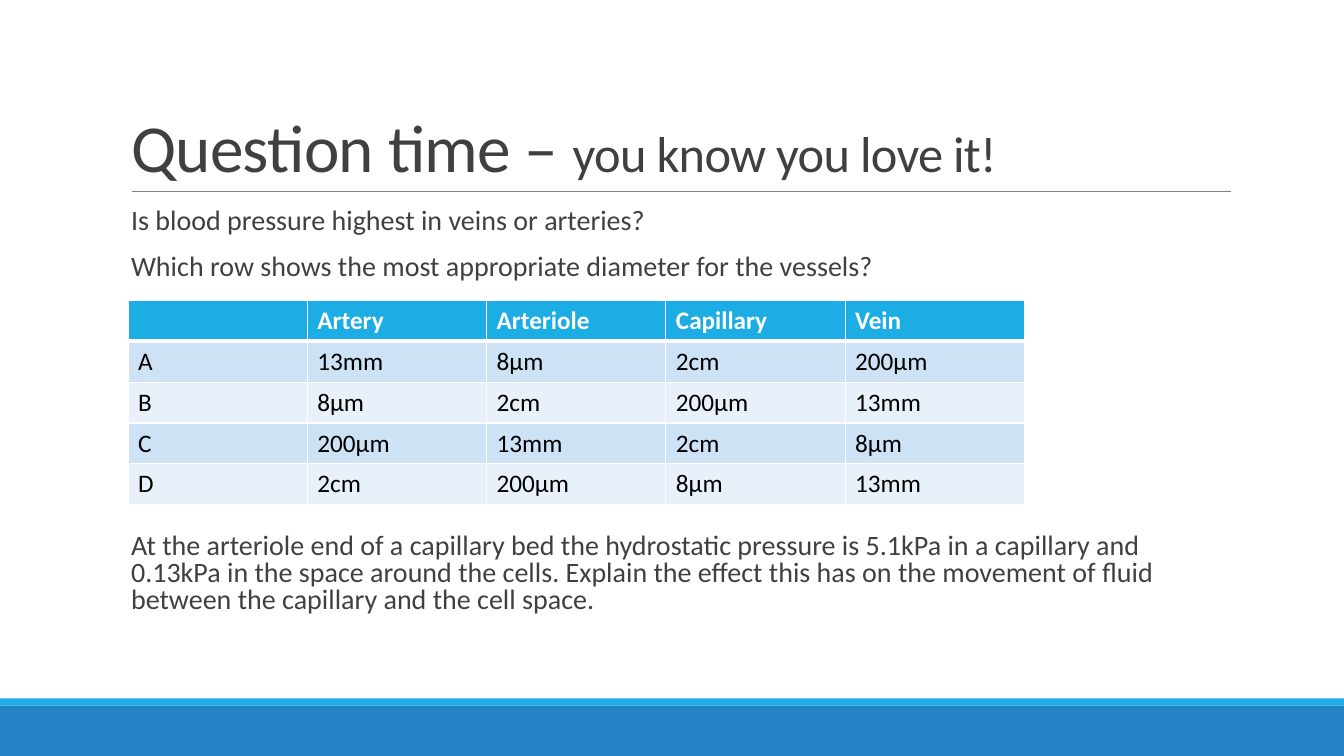
from lxml.etree import SubElement
from pptx import Presentation
from pptx.dml.color import RGBColor
from pptx.enum.shapes import MSO_CONNECTOR, MSO_SHAPE
from pptx.enum.text import MSO_ANCHOR, MSO_AUTO_SIZE, PP_ALIGN
from pptx.oxml.ns import qn
from pptx.util import Inches, Pt

FONT = "Calibri"
DARK, WHITE, CYAN = "404040", "FFFFFF", "1CADE4"
BANDS = ["CDE3F5", "E8F1FA"]
ROWS = [
    ["", "Artery", "Arteriole", "Capillary", "Vein"],
    ["A", "13mm", "8µm", "2cm", "200µm"],
    ["B", "8µm", "2cm", "200µm", "13mm"],
    ["C", "200µm", "13mm", "2cm", "8µm"],
    ["D", "2cm", "200µm", "8µm", "13mm"],
]
ASKS = [
    ("Is blood pressure highest in veins or arteries?", 12),
    ("Which row shows the most appropriate diameter for the vessels?", 12),
    ("At the arteriole end of a capillary bed the hydrostatic pressure is "
     "5.1kPa in a capillary and 0.13kPa in the space around the cells. "
     "Explain the effect this has on the movement of fluid between the "
     "capillary and the cell space.", 178),
]


def tint(code):
    return RGBColor.from_string(code)


def paint(fill, code):
    fill.solid()
    fill.fore_color.rgb = tint(code)


def write(para, text, size=20, color=DARK, bold=False, track=None):
    run = para.add_run()
    run.text = text
    font = run.font
    font.name, font.size, font.bold = FONT, Pt(size), bold
    font.color.rgb = tint(color)
    if track is not None:
        run.font._element.set("spc", str(int(track * 100)))


def place(shape, left, top, width, height):
    shape.left, shape.top = Inches(left), Inches(top)
    shape.width, shape.height = Inches(width), Inches(height)


def add_band(slide, top, height, color):
    band = slide.shapes.add_shape(
        MSO_SHAPE.RECTANGLE, 0, Inches(top), Inches(13.33), Inches(height))
    band.shadow.inherit = False
    paint(band.fill, color)
    band.line.fill.background()


def add_rule(slide, left, right, top):
    rule = slide.shapes.add_connector(
        MSO_CONNECTOR.STRAIGHT, Inches(left), Inches(top),
        Inches(right), Inches(top))
    rule.line.color.rgb = tint("808080")
    rule.line.width = Pt(0.5)
    SubElement(rule._element.spPr, qn("a:effectLst"))


def fill_title(title):
    place(title, 1.2, 0.31, 11, 1.59)
    frame = title.text_frame
    frame.auto_size = MSO_AUTO_SIZE.NONE
    frame.vertical_anchor = MSO_ANCHOR.BOTTOM
    para = frame.paragraphs[0]
    para.alignment = PP_ALIGN.LEFT
    para.line_spacing = 0.85
    write(para, "Question time – ", size=48, track=-0.5)
    write(para, "you know you love it!", size=36, track=-0.5)


def fill_body(body):
    place(body, 1.2, 2.02, 11, 4.4)
    frame = body.text_frame
    frame.auto_size = MSO_AUTO_SIZE.NONE
    frame.margin_left = frame.margin_right = 0
    for i, (text, gap) in enumerate(ASKS):
        para = frame.add_paragraph() if i else frame.paragraphs[0]
        para.line_spacing = 0.8
        para.space_before, para.space_after = Pt(gap), Pt(2)
        props = para._p.get_or_add_pPr()
        props.set("marL", str(Inches(0.1)))
        props.set("indent", "0")
        SubElement(props, qn("a:buNone"))
        write(para, text)


def edge(cell, low):
    props = cell._tc.get_or_add_tcPr()
    for side, width in (("L", 1), ("R", 1), ("T", 1), ("B", low)):
        line = SubElement(props, qn("a:ln" + side), w=str(Pt(width)))
        fill = SubElement(line, qn("a:solidFill"))
        SubElement(fill, qn("a:srgbClr"), val=WHITE)


def add_grid(slide):
    grid = slide.shapes.add_table(
        len(ROWS), len(ROWS[0]), Inches(1.27), Inches(2.98),
        Inches(8.89), Inches(2.02)).table
    for r, row in enumerate(ROWS):
        head = r == 0
        for c, text in enumerate(row):
            cell = grid.cell(r, c)
            edge(cell, 3 if head else 1)
            paint(cell.fill, CYAN if head else BANDS[(r - 1) % 2])
            if text:
                write(cell.text_frame.paragraphs[0], text, size=18,
                      color=WHITE if head else "000000", bold=head)


def main():
    deck = Presentation()
    deck.slide_width, deck.slide_height = Inches(13.33), Inches(7.5)
    slide = deck.slides.add_slide(deck.slide_layouts[1])
    paint(slide.background.fill, WHITE)
    add_band(slide, 7, 0.5, "2683C6")
    add_band(slide, 6.93, 0.07, CYAN)
    add_rule(slide, 1.31, 12.21, 1.9)
    fill_title(slide.shapes.title)
    fill_body(slide.placeholders[1])
    add_grid(slide)
    deck.save("out.pptx")


if __name__ == "__main__":
    main()
